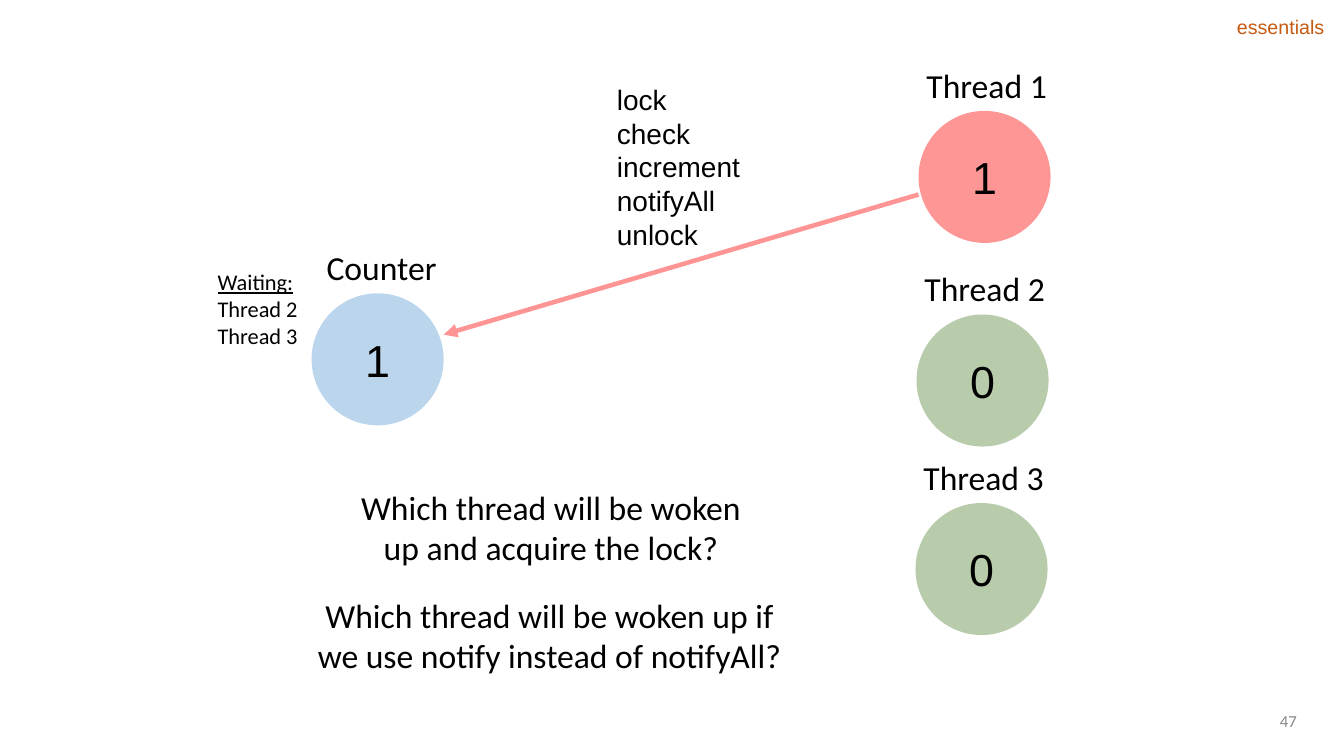
from dataclasses import dataclass

from lxml import etree
from pptx import Presentation
from pptx.dml.color import RGBColor
from pptx.enum.shapes import MSO_CONNECTOR, MSO_SHAPE
from pptx.enum.text import MSO_ANCHOR, PP_ALIGN
from pptx.oxml.ns import qn
from pptx.util import Inches, Pt

OVAL = MSO_SHAPE.OVAL
STRAIGHT = MSO_CONNECTOR.STRAIGHT
LEFT, CENTER, RIGHT = PP_ALIGN.LEFT, PP_ALIGN.CENTER, PP_ALIGN.RIGHT
TOP, MIDDLE = MSO_ANCHOR.TOP, MSO_ANCHOR.MIDDLE

COLORS = {
    "text": "000000",
    "counter": "5B9BD5",
    "active": "FF0000",
    "waiting": "548135",
    "tag": "C65A11",
    "page": "888888",
}
DIAMETER = 1.31


@dataclass
class Node:
    """A labelled circle holding a value."""
    label: str
    value: str
    color: str
    left: float
    top: float
    label_shift: float = -0.02
    label_width: float = 1.41


@dataclass
class Caption:
    """A block of text, one paragraph per line."""
    lines: list[str]
    left: float
    top: float
    width: float
    height: float
    size: float
    font: str = "Calibri"
    color: str = "text"
    align: PP_ALIGN = LEFT
    anchor: MSO_ANCHOR = TOP
    wrap: bool = False
    margin: float = 0.05


NODES = [
    Node("Counter", "1", "counter", 3.09, 2.91, 0.05, 1.31),
    Node("Thread 1", "1", "active", 9.11, 1.1),
    Node("Thread 2", "0", "waiting", 9.09, 3.12),
    Node("Thread 3", "0", "waiting", 9.08, 4.99),
]
STEPS = Caption(["lock", "check", "increment", "notifyAll", "unlock"],
                6.02, 0.77, 1.43, 1.78, 20, "Arial")
WAITING = Caption(["Waiting:", "Thread 2", "Thread 3"], 2.06, 2.61, 1.01, 0.64, 16)
QUESTIONS = [
    Caption(["Which thread will be woken up and acquire the lock?"],
            3.4, 4.73, 4.13, 0.68, 24, align=CENTER, wrap=True, margin=0.1),
    Caption(["Which thread will be woken up if we use notify instead of notifyAll?"],
            2.92, 5.8, 5.06, 0.68, 24, align=CENTER, wrap=True, margin=0.1),
]
TAG = Caption(["essentials"], 12.17, 0.1, 1.07, 0.34, 14, "Arial", "tag")
PAGE = Caption(["47"], 9.42, 6.95, 3.54, 0.4, 12, color="page",
               align=RIGHT, anchor=MIDDLE, wrap=True)


def rgb(name: str) -> RGBColor:
    return RGBColor.from_string(COLORS[name])


def style_text(frame, size: float, font: str, color: str, align: PP_ALIGN) -> None:
    for paragraph in frame.paragraphs:
        paragraph.alignment = align
        for run in paragraph.runs:
            run.font.size = Pt(size)
            run.font.name = font
            run.font.color.rgb = rgb(color)


def set_opacity(fill_parent, percent: int) -> None:
    color = fill_parent.find(qn("a:solidFill")).find(qn("a:srgbClr"))
    etree.SubElement(color, qn("a:alpha"), val=str(percent * 1000))


def add_caption(slide, caption: Caption):
    box = slide.shapes.add_textbox(Inches(caption.left), Inches(caption.top),
                                   Inches(caption.width), Inches(caption.height))
    frame = box.text_frame
    frame.text = "\n".join(caption.lines)
    frame.word_wrap = caption.wrap
    frame.vertical_anchor = caption.anchor
    frame.margin_top = frame.margin_bottom = Inches(caption.margin)
    style_text(frame, caption.size, caption.font, caption.color, caption.align)
    return frame


def add_node(slide, node: Node) -> None:
    circle = slide.shapes.add_shape(OVAL, Inches(node.left), Inches(node.top),
                                    Inches(DIAMETER), Inches(DIAMETER))
    circle.shadow.inherit = False
    circle.fill.solid()
    circle.fill.fore_color.rgb = rgb(node.color)
    set_opacity(circle._element.spPr, 41)
    circle.line.fill.background()
    circle.text_frame.text = node.value
    circle.text_frame.vertical_anchor = MIDDLE
    style_text(circle.text_frame, 32, "Arial", "text", CENTER)
    add_caption(slide, Caption([node.label], node.left + node.label_shift,
                               node.top - 0.51, node.label_width, 0.5, 24))


def add_arrow(slide, start: tuple[float, float], end: tuple[float, float]) -> None:
    arrow = slide.shapes.add_connector(STRAIGHT, *map(Inches, start + end))
    arrow.line.width = Pt(3.25)
    arrow.line.color.rgb = rgb("active")
    properties = arrow._element.spPr
    outline = properties.find(qn("a:ln"))
    set_opacity(outline, 42)
    etree.SubElement(outline, qn("a:tailEnd"), type="triangle")
    etree.SubElement(properties, qn("a:effectLst"))


def main() -> None:
    presentation = Presentation()
    presentation.slide_width = Inches(13.33)
    presentation.slide_height = Inches(7.5)
    slide = presentation.slides.add_slide(presentation.slide_layouts[6])

    # Counter and threads
    for node in NODES:
        add_node(slide, node)

    # Thread 1 updates the counter
    add_arrow(slide, (9.11, 1.93), (4.4, 3.32))
    add_caption(slide, STEPS)

    # Waiting threads under an underlined heading
    waiting = add_caption(slide, WAITING)
    waiting.paragraphs[0].runs[0].font.underline = True

    # Questions, corner tag and page number
    for caption in [*QUESTIONS, TAG, PAGE]:
        add_caption(slide, caption)

    presentation.save("out.pptx")


if __name__ == "__main__":
    main()
